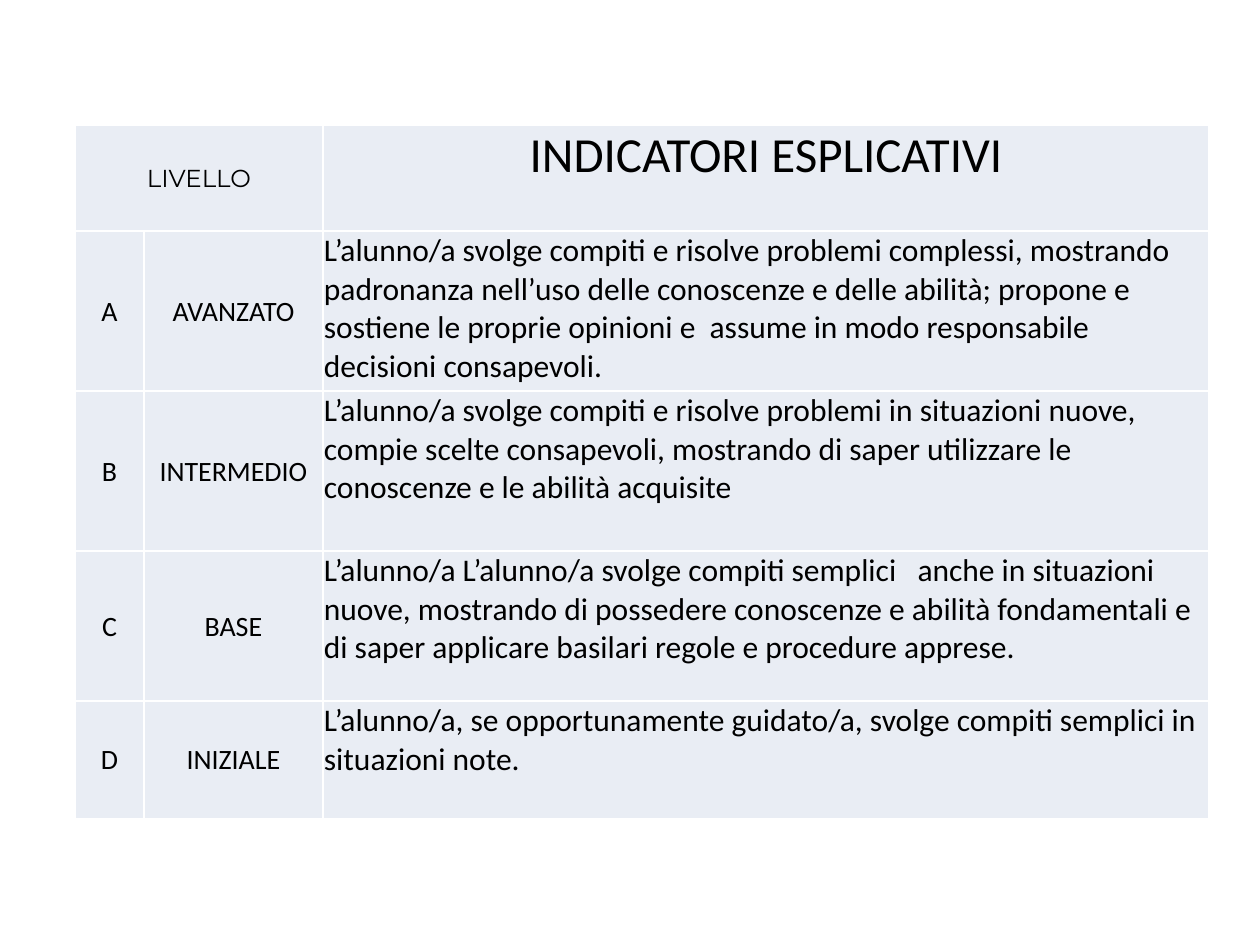
import dataclasses

import lxml.etree
import pptx
import pptx.dml.color
import pptx.enum.text
import pptx.oxml.ns
import pptx.table
import pptx.util

PX = 914400 // 126
BLACK = pptx.dml.color.RGBColor(0x00, 0x00, 0x00)
WHITE = pptx.dml.color.RGBColor(0xFF, 0xFF, 0xFF)
PALE_BLUE = pptx.dml.color.RGBColor(0xE9, 0xED, 0xF4)
LEFT, TOP = 75, 125
COLUMNS = (69, 179, 886)
ROWS = (106, 160, 160, 150, 118)
CENTER = pptx.enum.text.PP_ALIGN.CENTER
MIDDLE = pptx.enum.text.MSO_ANCHOR.MIDDLE
UPPER = pptx.enum.text.MSO_ANCHOR.TOP


@dataclasses.dataclass(frozen=True)
class Style:
    size: int
    align: pptx.enum.text.PP_ALIGN = CENTER
    anchor: pptx.enum.text.MSO_ANCHOR = MIDDLE
    font: str = "Calibri"


@dataclasses.dataclass(frozen=True)
class Level:
    letter: str
    name: str
    indicator: str


LEVEL_HEADER = Style(14, font="Montserrat")
INDICATOR_HEADER = Style(28, anchor=UPPER)
LABEL = Style(16)
BODY = Style(18, align=pptx.enum.text.PP_ALIGN.LEFT, anchor=UPPER)

LEVELS = (
    Level("A", "AVANZATO",
          "L’alunno/a svolge compiti e risolve problemi complessi, mostrando "
          "padronanza nell’uso delle conoscenze e delle abilità; propone e "
          "sostiene le proprie opinioni e  assume in modo responsabile "
          "decisioni consapevoli."),
    Level("B", "INTERMEDIO",
          "L’alunno/a svolge compiti e risolve problemi in situazioni nuove, "
          "compie scelte consapevoli, mostrando di saper utilizzare le "
          "conoscenze e le abilità acquisite"),
    Level("C", "BASE",
          "L’alunno/a L’alunno/a svolge compiti semplici   anche in situazioni "
          "nuove, mostrando di possedere conoscenze e abilità fondamentali e "
          "di saper applicare basilari regole e procedure apprese."),
    Level("D", "INIZIALE",
          "L’alunno/a, se opportunamente guidato/a, svolge compiti semplici in "
          "situazioni note."),
)


def px(length: int) -> int:
    return length * PX


def set_borders(cell: pptx.table._Cell) -> None:
    qn = pptx.oxml.ns.qn
    properties = cell._tc.get_or_add_tcPr()
    for index, side in enumerate(("lnL", "lnR", "lnT", "lnB")):
        line = lxml.etree.Element(qn(f"a:{side}"), w=str(pptx.util.Pt(1)))
        fill = lxml.etree.SubElement(line, qn("a:solidFill"))
        lxml.etree.SubElement(fill, qn("a:srgbClr"), val=str(WHITE))
        properties.insert(index, line)


def format_cell(cell: pptx.table._Cell) -> None:
    cell.fill.solid()
    cell.fill.fore_color.rgb = PALE_BLUE
    cell.margin_left = cell.margin_right = cell.margin_top = px(1)
    cell.margin_bottom = 0
    set_borders(cell)


def write_cell(cell: pptx.table._Cell, text: str, style: Style) -> None:
    cell.vertical_anchor = style.anchor
    p = cell.text_frame.paragraphs[0]
    p.text = text
    p.alignment = style.align
    p.font.name = style.font
    p.font.size = pptx.util.Pt(style.size)
    p.font.bold = False
    p.font.color.rgb = BLACK


def main() -> None:
    prs = pptx.Presentation()
    prs.slide_width = pptx.util.Inches(10)
    prs.slide_height = pptx.util.Inches(7.5)
    s = prs.slides.add_slide(prs.slide_layouts[6])
    table = s.shapes.add_table(
        len(ROWS), len(COLUMNS), px(LEFT), px(TOP), px(sum(COLUMNS)), px(sum(ROWS))
    ).table
    table.first_row = False
    table.horz_banding = False
    for column, width in zip(table.columns, COLUMNS):
        column.width = px(width)
    for row, height in zip(table.rows, ROWS):
        row.height = px(height)
    for cell in table.iter_cells():
        format_cell(cell)

    table.cell(0, 0).merge(table.cell(0, 1))
    write_cell(table.cell(0, 0), "LIVELLO", LEVEL_HEADER)
    write_cell(table.cell(0, 2), "INDICATORI ESPLICATIVI", INDICATOR_HEADER)
    for row, level in enumerate(LEVELS, start=1):
        write_cell(table.cell(row, 0), level.letter, LABEL)
        write_cell(table.cell(row, 1), level.name, LABEL)
        write_cell(table.cell(row, 2), level.indicator, BODY)
    prs.save("out.pptx")


if __name__ == "__main__":
    main()
